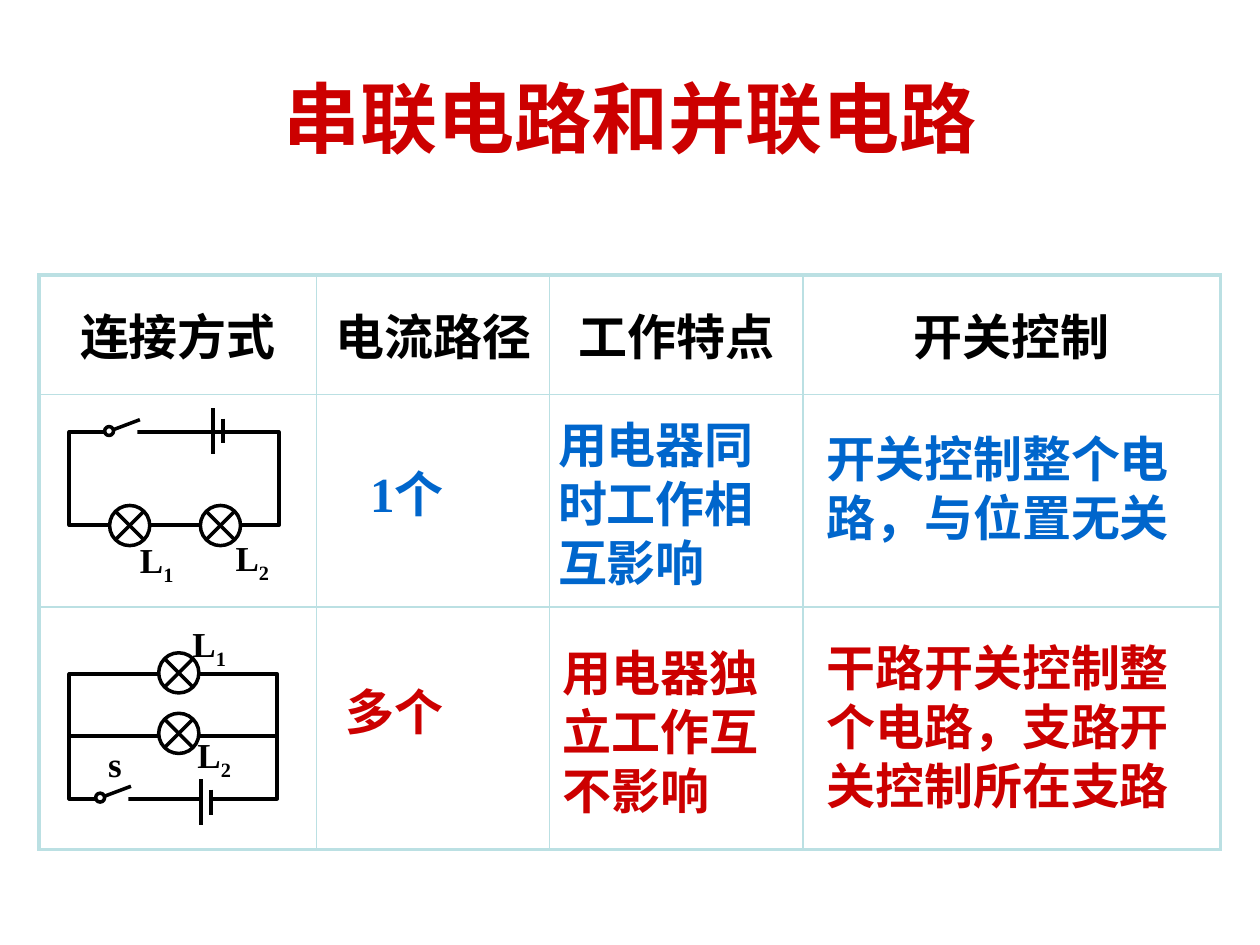
from dataclasses import dataclass

from lxml.etree import SubElement
from pptx import Presentation
from pptx.dml.color import RGBColor
from pptx.enum.shapes import MSO_CONNECTOR, MSO_SHAPE
from pptx.enum.text import MSO_ANCHOR, MSO_AUTO_SIZE, PP_ALIGN
from pptx.oxml.ns import qn
from pptx.util import Cm, Pt


@dataclass(frozen=True)
class Theme:
    """Colours, fonts and sizes of the slide."""
    red: str = "CC0000"
    blue: str = "0066CC"
    black: str = "000000"
    white: str = "FFFFFF"
    border: str = "BBE0E3"
    title_font: str = "Arial"
    body_font: str = "Times New Roman"
    title_size: float = 44
    body_size: float = 28
    label_size: float = 20
    wire: float = 2.25
    symbol: float = 2
    thin: float = 1


THEME = Theme()
HEADINGS = ("连接方式", "电流路径", "工作特点", "开关控制")
COLUMNS = (5.59, 4.7, 5.11, 8.41)
ROWS = (2.41, 4.29, 4.88)
ANSWERS = (
    ("1个", 7.21, 9.22, 3.2, THEME.blue),
    ("用电器独立工作互不影响", 11.1, 12.83, 4.8, THEME.red),
    ("开关控制整个电路，与位置无关", 16.41, 8.51, 7.59, THEME.blue),
    ("多个", 6.71, 13.61, 3.61, THEME.red),
    ("用电器同时工作相互影响", 11, 8.23, 4.8, THEME.blue),
    ("干路开关控制整个电路，支路开关控制所在支路", 16.41, 12.73, 8.1, THEME.red),
)


def colour(value):
    """Turn a hex string into a colour."""
    return RGBColor.from_string(value)


def apply_format(target, values):
    """Set each attribute of the target from a dict."""
    for name, value in values.items():
        setattr(target, name, value)


def write_run(paragraph, text, size, ink, font=THEME.body_font):
    """Add a bold run to a paragraph and return it."""
    run = paragraph.add_run()
    run.text = text
    apply_format(run.font, {"name": font, "size": Pt(size), "bold": True})
    run.font.color.rgb = colour(ink)
    return run


def add_text(shapes, left, top, width, height, wrap=True):
    """Add a text box and return its first paragraph."""
    frame = shapes.add_textbox(Cm(left), Cm(top), Cm(width), Cm(height)).text_frame
    apply_format(frame, {"word_wrap": wrap, "auto_size": MSO_AUTO_SIZE.SHAPE_TO_FIT_TEXT})
    return frame.paragraphs[0]


def add_line(shapes, start, end, weight=THEME.wire):
    """Draw a straight black line between two points."""
    points = [Cm(value) for value in (*start, *end)]
    line = shapes.add_connector(MSO_CONNECTOR.STRAIGHT, *points)
    line.line.color.rgb = colour(THEME.black)
    line.line.width = Pt(weight)
    SubElement(line._element.spPr, qn("a:effectLst"))


def add_outline(shapes, kind, left, top, width, height, weight=None, filled=True):
    """Draw a preset shape, with a black outline if a weight is given."""
    shape = shapes.add_shape(kind, Cm(left), Cm(top), Cm(width), Cm(height))
    shape.shadow.inherit = False
    if filled:
        shape.fill.solid()
        shape.fill.fore_color.rgb = colour(THEME.white)
    else:
        shape.fill.background()
    if weight:
        shape.line.color.rgb = colour(THEME.black)
        shape.line.width = Pt(weight)
    else:
        shape.line.fill.background()


def add_battery(shapes, left, middle):
    """Draw the long and short plates of a battery."""
    for offset, half in ((0, 0.46), (0.2, 0.25)):
        add_line(shapes, (left + offset, middle - half), (left + offset, middle + half))


def add_switch(shapes, left, top):
    """Draw an open switch over a gap in the wire."""
    add_outline(shapes, MSO_SHAPE.RECTANGLE, left, top, 0.61, 0.33)
    add_line(shapes, (left + 0.05, top + 0.18), (left + 0.66, top - 0.05), THEME.symbol)
    add_outline(shapes, MSO_SHAPE.OVAL, left - 0.05, top + 0.09, 0.18, 0.18, THEME.symbol)


def add_lamp(shapes, left, top):
    """Draw a lamp symbol."""
    add_outline(shapes, MSO_SHAPE.FLOWCHART_SUMMING_JUNCTION, left, top, 0.81, 0.81, THEME.symbol)


def add_lamp_label(shapes, number, left, top):
    """Write L with a subscript number."""
    paragraph = add_text(shapes, left, top, 1.22, 1.12, wrap=False)
    write_run(paragraph, "L", THEME.label_size, THEME.black)
    subscript = write_run(paragraph, number, THEME.label_size, THEME.black)
    subscript.font._element.set("baseline", "-25000")


def add_series_circuit(slide, left, top, width, height):
    """Draw two lamps in series in the given box."""
    shapes = slide.shapes.add_group_shape().shapes
    add_outline(shapes, MSO_SHAPE.RECTANGLE, left, top, width, height, THEME.wire, False)
    add_battery(shapes, left + 2.9, top - 0.02)
    add_switch(shapes, left + 0.76, top - 0.2)
    for offset in (0.81, 2.64):
        add_lamp(shapes, left + offset, top + height - 0.4)
    add_lamp_label(shapes, "2", left + 3.1, top + 1.98)
    add_lamp_label(shapes, "1", left + 1.17, top + 2.03)


def add_parallel_circuit(slide, left, top, width, height):
    """Draw two lamps in parallel in the given box."""
    shapes = slide.shapes.add_group_shape().shapes
    branch = top + height / 2
    add_outline(shapes, MSO_SHAPE.RECTANGLE, left, top, width, height, THEME.wire, False)
    add_outline(shapes, MSO_SHAPE.RECTANGLE, left + 2.66, top + height - 0.07, 0.2, 0.25)
    add_battery(shapes, left + 2.66, top + height + 0.07)
    add_switch(shapes, left + 0.58, top + height - 0.2)
    add_line(shapes, (left, branch), (left + width - 0.05, branch))
    for offset in (-0.43, 0.79):
        add_lamp(shapes, left + 1.8, top + offset)
    add_lamp_label(shapes, "2", left + 2.33, top + 1.07)
    add_lamp_label(shapes, "1", left + 2.23, top - 1.17)
    label = add_text(shapes, left + 0.53, branch, 1.17, 1.12)
    write_run(label, "s", THEME.label_size, THEME.black)


def set_borders(cell, weights):
    """Set the left, right, top and bottom borders of a cell."""
    properties = cell._tc.get_or_add_tcPr()
    for index, (side, weight) in enumerate(zip("LRTB", weights)):
        line = properties.makeelement(qn(f"a:ln{side}"), {"w": str(Pt(weight))})
        fill = SubElement(line, qn("a:solidFill"))
        SubElement(fill, qn("a:srgbClr"), val=THEME.border)
        properties.insert(index, line)


def add_comparison_table(slide, left, top):
    """Add the table with its headings and empty answer cells."""
    frame = slide.shapes.add_table(
        len(ROWS), len(COLUMNS), Cm(left), Cm(top), Cm(sum(COLUMNS)), Cm(sum(ROWS)))
    table = frame.table
    apply_format(table, {"first_row": False, "horz_banding": False})
    for column, width in zip(table.columns, COLUMNS):
        column.width = Cm(width)
    for y, height in enumerate(ROWS):
        table.rows[y].height = Cm(height)
        for x, heading in enumerate(HEADINGS):
            cell = table.cell(y, x)
            cell.fill.background()
            edges = (x == 0, x == len(COLUMNS) - 1, y == 0, y == len(ROWS) - 1)
            set_borders(cell, [THEME.wire if edge else THEME.thin for edge in edges])
            if y == 0:
                cell.vertical_anchor = MSO_ANCHOR.MIDDLE
                paragraph = cell.text_frame.paragraphs[0]
                apply_format(paragraph, {"alignment": PP_ALIGN.CENTER, "space_before": Pt(5.6)})
                write_run(paragraph, heading, THEME.body_size, THEME.black)


def add_title(slide, left, top, width, height):
    """Move the title placeholder to the box and fill it."""
    title = slide.shapes.title
    apply_format(title, {"left": Cm(left), "top": Cm(top), "width": Cm(width), "height": Cm(height)})
    title.text_frame.vertical_anchor = MSO_ANCHOR.MIDDLE
    paragraph = title.text_frame.paragraphs[0]
    paragraph.alignment = PP_ALIGN.CENTER
    write_run(paragraph, "串联电路和并联电路", THEME.title_size, THEME.red, THEME.title_font)


def main():
    """Build the slide and save it."""
    presentation = Presentation()
    apply_format(presentation, {"slide_width": Cm(25.4), "slide_height": Cm(19.05)})
    slide = presentation.slides.add_slide(presentation.slide_layouts[5])
    add_title(slide, 1.27, 0.76, 22.86, 3.18)
    add_comparison_table(slide, 0.79, 5.54)
    for text, left, top, width, ink in ANSWERS:
        write_run(add_text(slide.shapes, left, top, width, 1.45), text, THEME.body_size, ink)
    add_series_circuit(slide, 1.4, 8.71, 4.22, 1.88)
    add_parallel_circuit(slide, 1.4, 13.59, 4.19, 2.51)
    presentation.save("out.pptx")


if __name__ == "__main__":
    main()
